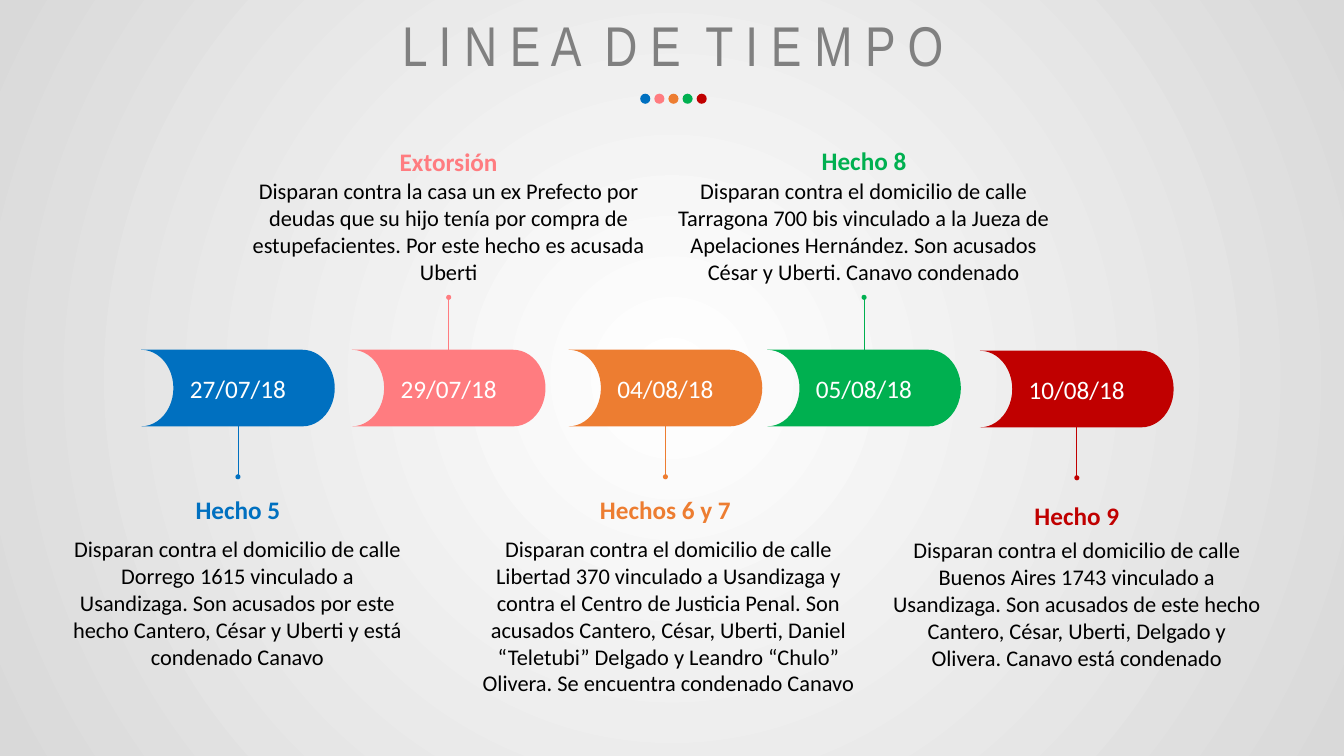
from pptx import Presentation
from pptx.dml.color import RGBColor
from pptx.enum.shapes import MSO_CONNECTOR, MSO_SHAPE
from pptx.enum.text import MSO_ANCHOR, PP_ALIGN
from pptx.oxml.ns import qn
from pptx.util import Inches, Pt
from lxml import etree

PILL, DOT = MSO_SHAPE.FLOWCHART_STORED_DATA, MSO_SHAPE.OVAL
LINE = MSO_CONNECTOR.STRAIGHT
TOP, MIDDLE, BOTTOM = MSO_ANCHOR.TOP, MSO_ANCHOR.MIDDLE, MSO_ANCHOR.BOTTOM
CENTER = PP_ALIGN.CENTER

TITLE = "L I N E A  D E  T I E M P O"

# date, colour, pill (left, top), stem goes up,
# heading, heading (top, width), body (left, top, width, height), body text
EVENTS = [
    ("27/07/18", "blue", (1.4, 3.47), False,
     "Hecho 5", (4.86, 2.72), (0.62, 5.26, 3.47, 1.45),
     "Disparan contra el domicilio de calle Dorrego 1615 vinculado a Usandizaga. "
     "Son acusados por este hecho Cantero, César y Uberti y está condenado Canavo"),
    ("29/07/18", "pink", (3.49, 3.47), True,
     "Extorsión", (1.4, 3.4), (2.37, 1.71, 4.16, 1.18),
     "Disparan contra la casa un ex Prefecto por deudas que su hijo tenía por compra "
     "de estupefacientes. Por este hecho es acusada Uberti"),
    ("04/08/18", "orange", (5.64, 3.47), False,
     "Hechos 6 y 7", (4.86, 3.11), (4.57, 5.26, 4.12, 1.72),
     "Disparan contra el domicilio de calle Libertad 370 vinculado a Usandizaga y "
     "contra el Centro de Justicia Penal. Son acusados Cantero, César, Uberti, Daniel "
     "“Teletubi” Delgado y Leandro “Chulo” Olivera. Se encuentra condenado Canavo"),
    ("05/08/18", "green", (7.61, 3.47), True,
     "Hecho 8", (1.39, 3.4), (6.49, 1.71, 4.15, 1.18),
     "Disparan contra el domicilio de calle Tarragona 700 bis vinculado a la Jueza de "
     "Apelaciones Hernández. Son acusados César y Uberti. Canavo condenado"),
    ("10/08/18", "red", (9.72, 3.48), False,
     "Hecho 9", (4.91, 2.25), (8.76, 5.27, 3.84, 1.45),
     "Disparan contra el domicilio de calle Buenos Aires 1743 vinculado a Usandizaga. "
     "Son acusados de este hecho Cantero, César, Uberti, Delgado y Olivera. "
     "Canavo está condenado"),
]

THEME = {
    "blue": "0070C0", "pink": "FF7C80", "orange": "ED7D31",
    "green": "00B050", "red": "C00000",
    "title": "808080", "ink": "000000", "white": "FFFFFF", "edge": "D9D9D9",
    "font": "Calibri", "title_font": "Arial Narrow",
    "title_size": 40, "head_size": 18, "body_size": 16,
}
PILL_W, PILL_H = 1.92, 0.76
STEM, STEM_W, TIP = 0.52, 0.5, 0.05
MARK, MARK_STEP, MARK_LEFT, MARK_TOP = 0.1, 0.14, 6.35, 0.93


def color(name):
    return RGBColor.from_string(THEME[name])


def write(shape, text, size="body_size", ink="ink", font="font",
          bold=False, anchor=TOP, space=1.0):
    frame = shape.text_frame
    frame.word_wrap = True
    frame.vertical_anchor = anchor
    para = frame.paragraphs[0]
    para.alignment = CENTER
    para.line_spacing = space
    run = para.add_run()
    run.text = text
    run.font.name = THEME[font]
    run.font.size = Pt(THEME[size])
    run.font.bold = bold
    run.font.color.rgb = color(ink)


def add_text(slide, box, text, **style):
    write(slide.shapes.add_textbox(*map(Inches, box)), text, **style)


def add_shape(shapes, kind, box, fill):
    shape = shapes.add_shape(kind, *map(Inches, box))
    shape.shadow.inherit = False
    shape.fill.solid()
    shape.fill.fore_color.rgb = color(fill)
    shape.line.fill.background()
    return shape


def add_stem(slide, x, start, end, ink):
    line = slide.shapes.add_connector(LINE, *map(Inches, (x, start, x, end)))
    line.line.color.rgb = color(ink)
    line.line.width = Pt(STEM_W)
    etree.SubElement(line._element.spPr, qn("a:effectLst"))


def paint_back(slide):
    """Fill the background with a round gradient, light at the centre."""
    fill = slide.background.fill
    fill.gradient()
    for stop, name, place in zip(fill.gradient_stops, ("white", "edge"), (0, 1)):
        stop.color.rgb = color(name)
        stop.position = place
    grad = slide._element.find(".//" + qn("a:gradFill"))
    old = grad.find(qn("a:lin"))
    round_way = etree.Element(qn("a:path"), {"path": "circle"})
    etree.SubElement(round_way, qn("a:fillToRect"),
                     {side: "50000" for side in "ltrb"})
    grad.replace(old, round_way)


def add_event(slide, event):
    date, hue, (left, top), up, head, (head_top, head_w), body, text = event
    mid = left + PILL_W / 2
    pill = add_shape(slide.shapes, PILL, (left, top, PILL_W, PILL_H), hue)
    pill._element.spPr.xfrm.set("flipH", "1")
    write(pill, date, size="head_size", ink="white", anchor=MIDDLE)

    start = top if up else top + PILL_H - 0.02
    end = start - STEM if up else start + STEM
    add_stem(slide, mid, start, end, hue)
    add_shape(slide.shapes, DOT, (mid - TIP / 2, end - TIP / 2, TIP, TIP), hue)

    add_text(slide, (mid - head_w / 2, head_top, head_w, 0.4), head,
             size="head_size", ink=hue, bold=True)
    add_text(slide, body, text)


def main():
    deck = Presentation()
    deck.slide_width, deck.slide_height = Inches(13.33), Inches(7.5)
    slide = deck.slides.add_slide(deck.slide_layouts[6])
    paint_back(slide)
    add_text(slide, (2.26, 0.09, 8.83, 0.74), TITLE, size="title_size",
             ink="title", font="title_font", anchor=BOTTOM, space=0.9)
    for event in EVENTS:
        add_event(slide, event)
    marks = slide.shapes.add_group_shape()
    for i, event in enumerate(EVENTS):
        box = (MARK_LEFT + i * MARK_STEP, MARK_TOP, MARK, MARK)
        add_shape(marks.shapes, DOT, box, event[1])
    deck.save("out.pptx")


if __name__ == "__main__":
    main()
